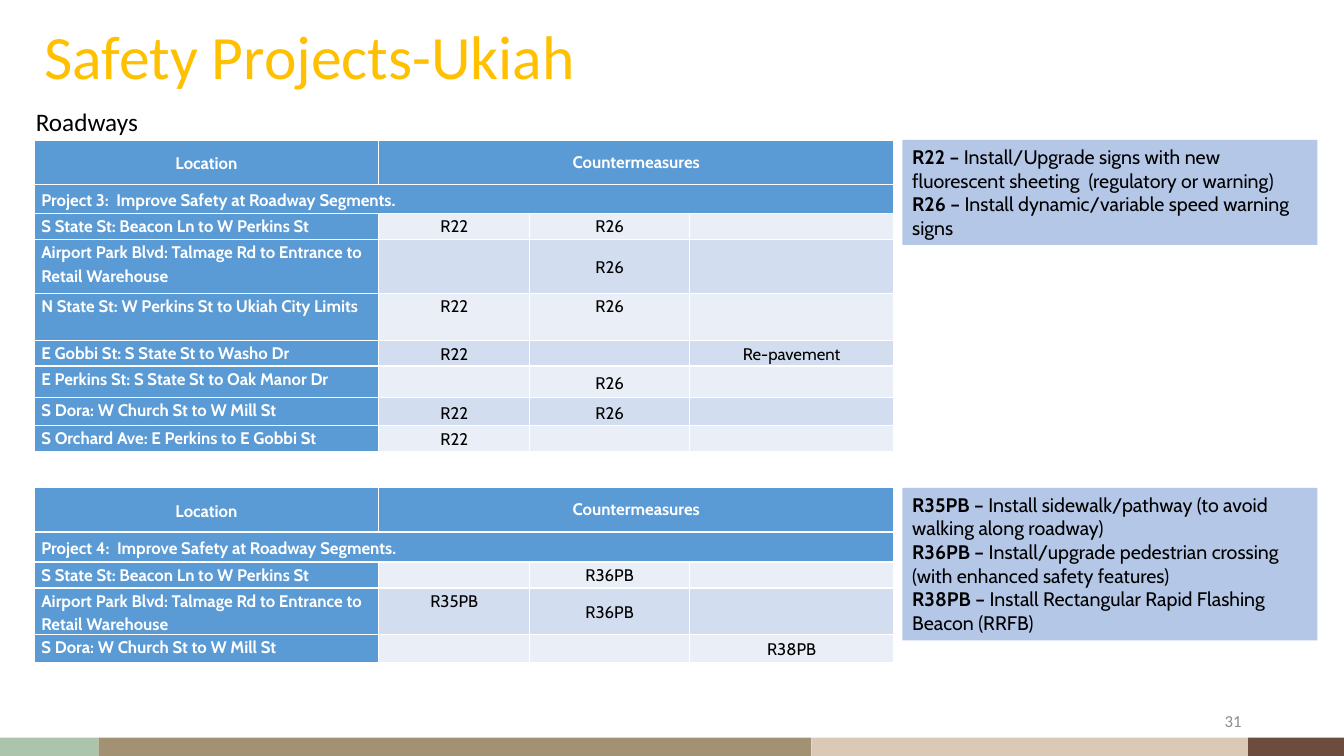
from dataclasses import dataclass

from lxml import etree
from pptx import Presentation
from pptx.dml.color import RGBColor
from pptx.enum import shapes, text
from pptx.oxml import ns
from pptx.util import Pt

COLORS = {
    "title": "FFC000", "ink": "000000", "white": "FFFFFF", "page": "8C8C8C",
    "header": "5B9BD5", "light band": "EAEFF7", "dark band": "D2DEEF",
    "legend": "B4C7E7", "sand": "DBC9B7", "brown": "6C4C3E",
    "sage": "ACC4AC", "khaki": "A29172",
}
TABLE_LEFT = 24.5
COLUMN_WIDTHS = (246, 108, 114, 146)
HEADER_HEIGHT = 31.5
LEGEND_LEFT, LEGEND_WIDTH = 644.5, 296.5


@dataclass(frozen=True)
class Segment:
    location: str
    countermeasures: tuple[str, str, str]
    height: float
    line_spacing: float = 1.15
    top_columns: tuple[int, ...] = ()


@dataclass(frozen=True)
class Project:
    heading: str
    top: float
    heading_height: float
    segments: tuple[Segment, ...]
    legend_height: float
    legend: tuple[tuple[str, str], ...]


@dataclass(frozen=True)
class Strip:
    left: float
    width: float
    color: str


PROJECTS = (
    Project(
        "Project 3:  Improve Safety at Roadway Segments.", 100, 21,
        (
            Segment("S State St: Beacon Ln to W Perkins St", ("R22", "R26", ""), 18.5, 1.0),
            Segment("Airport Park Blvd: Talmage Rd to Entrance to Retail Warehouse",
                    ("", "R26", ""), 38.5),
            Segment("N State St: W Perkins St to Ukiah City Limits", ("R22", "R26", ""), 33.5,
                    top_columns=(1, 2)),
            Segment("E Gobbi St: S State St to Washo Dr", ("R22", "", "Re-pavement"), 18.5),
            Segment("E Perkins St: S State St to Oak Manor Dr", ("", "R26", ""), 22.5),
            Segment("S Dora: W Church St to W Mill St", ("R22", "R26", ""), 20),
            Segment("S Orchard Ave: E Perkins to E Gobbi St", ("R22", "", ""), 18.5),
        ),
        75,
        (
            ("R22", "Install/Upgrade signs with new fluorescent sheeting  (regulatory or warning)"),
            ("R26", "Install dynamic/variable speed warning signs"),
        ),
    ),
    Project(
        "Project 4:  Improve Safety at Roadway Segments.", 348.5, 21.5,
        (
            Segment("S State St: Beacon Ln to W Perkins St", ("", "R36PB", ""), 18.5, 1.0),
            Segment("Airport Park Blvd: Talmage Rd to Entrance to Retail Warehouse",
                    ("R35PB", "R36PB", ""), 33, top_columns=(1,)),
            Segment("S Dora: W Church St to W Mill St", ("", "", "R38PB"), 20),
        ),
        109,
        (
            ("R35PB", "Install sidewalk/pathway (to avoid walking along roadway)"),
            ("R36PB", "Install/upgrade pedestrian crossing (with enhanced safety features)"),
            ("R38PB", "Install Rectangular Rapid Flashing Beacon (RRFB)"),
        ),
    ),
)
STRIPS = (
    Strip(0, 70.5, "sage"), Strip(70.5, 509, "khaki"),
    Strip(579.5, 312, "sand"), Strip(891.5, 70.5, "brown"),
)


def rgb(color: str) -> RGBColor:
    return RGBColor.from_string(COLORS[color])


def set_font(paragraph, name: str, size: float, color: str) -> None:
    paragraph.font.name = name
    paragraph.font.size = Pt(size)
    paragraph.font.color.rgb = rgb(color)


def add_rectangle(slide, left: float, top: float, width: float, height: float, color: str):
    rectangle = slide.shapes.add_shape(
        shapes.MSO_SHAPE.RECTANGLE, Pt(left), Pt(top), Pt(width), Pt(height))
    rectangle.shadow.inherit = False
    rectangle.fill.solid()
    rectangle.fill.fore_color.rgb = rgb(color)
    rectangle.line.fill.background()
    return rectangle


def fill_cell(cell, words: str, fill: str, color: str = "white", centered: bool = True,
              spacing: float = 1.15, at_top: bool = False) -> None:
    cell.fill.solid()
    cell.fill.fore_color.rgb = rgb(fill)
    cell.margin_left = cell.margin_right = Pt(5)
    cell.margin_top = cell.margin_bottom = 0
    cell.vertical_anchor = text.MSO_ANCHOR.TOP if at_top else text.MSO_ANCHOR.MIDDLE
    paragraph = cell.text_frame.paragraphs[0]
    if not words:
        # Keeps an empty cell from stretching its row.
        etree.SubElement(paragraph._p, ns.qn("a:endParaRPr"), sz="1200")
        return
    paragraph.text = words
    paragraph.alignment = text.PP_ALIGN.CENTER if centered else text.PP_ALIGN.LEFT
    paragraph.line_spacing = spacing
    set_font(paragraph, "Cabin", 12, color)
    paragraph.font.bold = color == "white"


def add_project_table(slide, project: Project) -> None:
    heights = (HEADER_HEIGHT, project.heading_height,
               *(segment.height for segment in project.segments))
    table = slide.shapes.add_table(
        len(heights), len(COLUMN_WIDTHS), Pt(TABLE_LEFT), Pt(project.top),
        Pt(sum(COLUMN_WIDTHS)), Pt(sum(heights))).table
    for column, width in zip(table.columns, COLUMN_WIDTHS):
        column.width = Pt(width)
    for row, height in zip(table.rows, heights):
        row.height = Pt(height)

    table.cell(0, 1).merge(table.cell(0, 3))
    table.cell(1, 0).merge(table.cell(1, 3))
    fill_cell(table.cell(0, 0), "Location", "header")
    fill_cell(table.cell(0, 1), "Countermeasures", "header", spacing=1.0)
    fill_cell(table.cell(1, 0), project.heading, "header", centered=False)

    for row, segment in enumerate(project.segments, start=2):
        fill_cell(table.cell(row, 0), segment.location, "header", centered=False, at_top=True)
        band = "dark band" if row % 2 else "light band"
        for column, code in enumerate(segment.countermeasures, start=1):
            fill_cell(table.cell(row, column), code, band, "ink",
                      spacing=segment.line_spacing, at_top=column in segment.top_columns)


def add_legend(slide, project: Project) -> None:
    legend = add_rectangle(slide, LEGEND_LEFT, project.top, LEGEND_WIDTH,
                           project.legend_height, "legend")
    frame = legend.text_frame
    frame.word_wrap = True
    frame.vertical_anchor = text.MSO_ANCHOR.TOP
    for index, (code, meaning) in enumerate(project.legend):
        paragraph = frame.add_paragraph() if index else frame.paragraphs[0]
        paragraph.alignment = text.PP_ALIGN.LEFT
        set_font(paragraph, "Cabin", 14, "ink")
        code_run = paragraph.add_run()
        code_run.text = f"{code} – "
        code_run.font.bold = True
        paragraph.add_run().text = meaning


def add_label(slide, words: str, left: float, top: float, width: float, size: float,
              color: str, alignment, anchor) -> None:
    frame = slide.shapes.add_textbox(Pt(left), Pt(top), Pt(width), Pt(29)).text_frame
    frame.word_wrap = True
    frame.vertical_anchor = anchor
    paragraph = frame.paragraphs[0]
    paragraph.text = words
    paragraph.alignment = alignment
    set_font(paragraph, "Calibri", size, color)


def add_title(slide, words: str) -> None:
    title = slide.shapes.title
    title.left, title.top, title.width, title.height = Pt(24.5), Pt(-10), Pt(828), Pt(104.5)
    title.text_frame.vertical_anchor = text.MSO_ANCHOR.MIDDLE
    title.text_frame.auto_size = text.MSO_AUTO_SIZE.NONE
    paragraph = title.text_frame.paragraphs[0]
    paragraph.text = words
    paragraph.alignment = text.PP_ALIGN.LEFT
    paragraph.line_spacing = 0.9
    set_font(paragraph, "Calibri", 44, "title")


def main() -> None:
    deck = Presentation()
    deck.slide_width, deck.slide_height = Pt(960), Pt(540)
    slide = deck.slides.add_slide(deck.slide_layouts[5])
    for strip in STRIPS:
        add_rectangle(slide, strip.left, 527, strip.width, 13.5, strip.color)
    add_title(slide, "Safety Projects-Ukiah")
    add_label(slide, "31", 678, 500.5, 216, 12, "page",
              text.PP_ALIGN.RIGHT, text.MSO_ANCHOR.MIDDLE)
    add_label(slide, "Roadways", 18.5, 72.5, 427, 18, "ink",
              text.PP_ALIGN.LEFT, text.MSO_ANCHOR.TOP)
    for project in PROJECTS:
        add_project_table(slide, project)
        add_legend(slide, project)
    deck.save("out.pptx")


if __name__ == "__main__":
    main()
